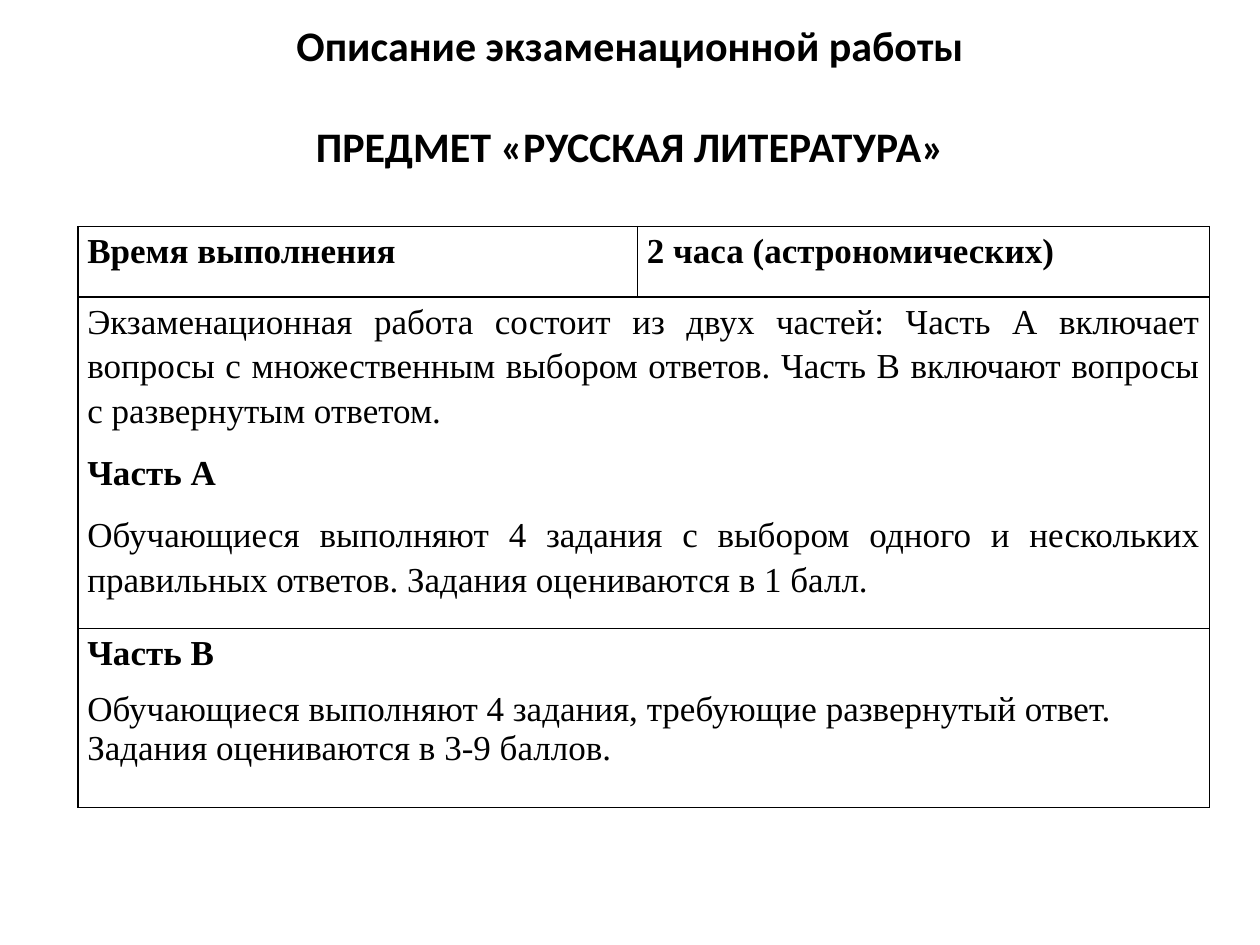
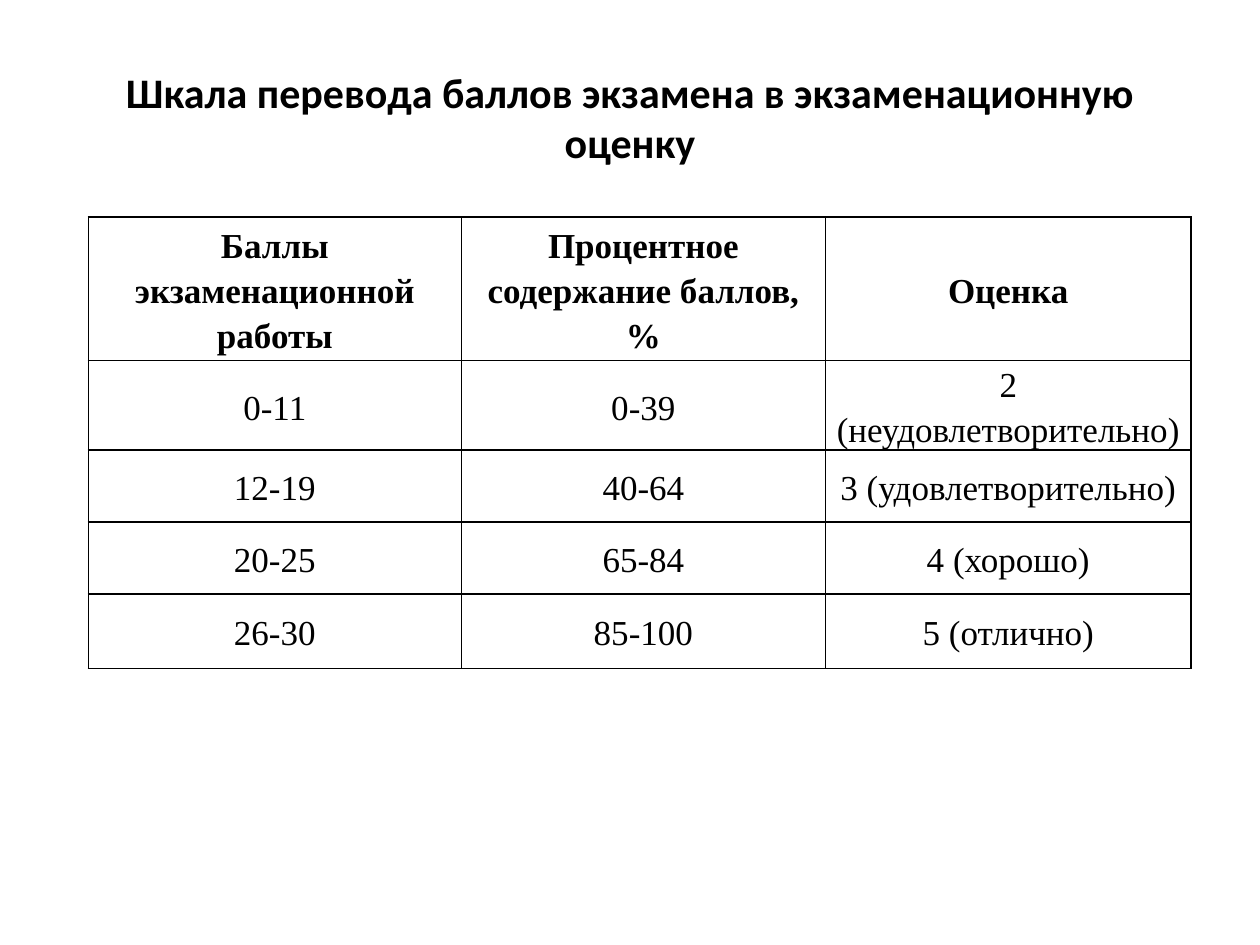
import dataclasses

import lxml.etree
import pptx
import pptx.dml.color
import pptx.enum.text
import pptx.oxml.ns
import pptx.util

Cm = pptx.util.Cm
Pt = pptx.util.Pt
ALIGN = pptx.enum.text.PP_ALIGN
ANCHOR = pptx.enum.text.MSO_ANCHOR
TITLE_ONLY = 5


@dataclasses.dataclass(frozen=True)
class Theme:
    ink: str = "000000"
    title_font: str = "Calibri"
    title_size: int = 24
    table_font: str = "Times New Roman"
    table_size: int = 20
    border: int = 1
    line_spacing: float = 1.15
    space_after: int = 10
    cell_inset: float = 0.19


THEME = Theme()


@dataclasses.dataclass(frozen=True)
class Line:
    """One paragraph of a table cell."""
    text: str
    bold: bool = False
    align: ALIGN = ALIGN.JUSTIFY
    spacing: float = THEME.line_spacing
    after: int = THEME.space_after


def add_span(para, text, font, size, bold):
    span = para.add_run()
    span.text = text
    span.font.name = font
    span.font.size = Pt(size)
    span.font.bold = bold
    span.font.color.rgb = pptx.dml.color.RGBColor.from_string(THEME.ink)


def paragraphs(frame, count):
    """Yield the frame's first paragraph, then new ones up to count."""
    yield frame.paragraphs[0]
    for _ in range(count - 1):
        yield frame.add_paragraph()


def add_titled_page(deck, title_lines, anchor=ANCHOR.MIDDLE, gap=0, bottom_inset=0.13):
    page = deck.slides.add_slide(deck.slide_layouts[TITLE_ONLY])
    box = page.shapes.title
    box.left, box.top, box.width, box.height = Cm(1.27), Cm(0.76), Cm(22.86), Cm(3.18)
    frame = box.text_frame
    frame.auto_size = pptx.enum.text.MSO_AUTO_SIZE.NONE
    frame.word_wrap = True
    frame.vertical_anchor = anchor
    frame.margin_bottom = Cm(bottom_inset)
    for index, para in enumerate(paragraphs(frame, len(title_lines))):
        para.alignment = ALIGN.CENTER
        para.space_before = Pt(gap if index else 0)
        add_span(para, title_lines[index], THEME.title_font, THEME.title_size, True)
    return page


def draw_borders(cell):
    properties = cell._tc.get_or_add_tcPr()
    qn = pptx.oxml.ns.qn
    for side in ("a:lnL", "a:lnR", "a:lnT", "a:lnB"):
        line = lxml.etree.SubElement(properties, qn(side), w=str(Pt(THEME.border)))
        fill = lxml.etree.SubElement(line, qn("a:solidFill"))
        lxml.etree.SubElement(fill, qn("a:srgbClr"), val=THEME.ink)


def add_grid(page, left, top, columns, rows, anchor):
    """Add an unfilled, ruled table; columns and rows are sizes in centimetres."""
    frame = page.shapes.add_table(len(rows), len(columns), Cm(left), Cm(top),
                                  Cm(sum(columns)), Cm(sum(rows)))
    table = frame.table
    table.first_row = table.horz_banding = False
    for column, width in zip(table.columns, columns):
        column.width = Cm(width)
    for row, height in zip(table.rows, rows):
        row.height = Cm(height)
        for cell in row.cells:
            cell.vertical_anchor = anchor
            cell.margin_left = cell.margin_right = Cm(THEME.cell_inset)
            cell.margin_top = cell.margin_bottom = 0
            draw_borders(cell)
            cell.fill.background()
    return table


def write_cell(cell, *lines):
    for para, line in zip(paragraphs(cell.text_frame, len(lines)), lines):
        para.alignment = line.align
        para.line_spacing = line.spacing
        para.space_after = Pt(line.after)
        add_span(para, line.text, THEME.table_font, THEME.table_size, line.bold)


def add_exam_description(deck):
    page = add_titled_page(
        deck, ["Описание экзаменационной работы", "ПРЕДМЕТ «РУССКАЯ ЛИТЕРАТУРА»"],
        anchor=ANCHOR.BOTTOM, gap=29, bottom_inset=0.5)
    table = add_grid(page, 1.57, 4.57, [11.28, 11.53], [1.42, 6.68, 3.61], ANCHOR.TOP)
    for row in (1, 2):
        table.cell(row, 0).merge(table.cell(row, 1))
    write_cell(table.cell(0, 0), Line("Время выполнения", bold=True, after=0))
    write_cell(table.cell(0, 1), Line("2 часа (астрономических)", bold=True, after=0))
    write_cell(
        table.cell(1, 0),
        Line("Экзаменационная работа состоит из двух частей: Часть А включает вопросы "
             "с множественным выбором ответов. Часть В включают вопросы с развернутым "
             "ответом."),
        Line("Часть А", bold=True),
        Line("Обучающиеся выполняют 4 задания с выбором одного и нескольких правильных "
             "ответов. Задания оцениваются в 1 балл."))
    write_cell(
        table.cell(2, 0),
        Line("Часть В", bold=True),
        Line("Обучающиеся выполняют 4 задания, требующие развернутый ответ. "
             "Задания оцениваются в 3-9 баллов.", align=ALIGN.LEFT, spacing=1.0, after=0))


def add_grade_scale(deck):
    page = add_titled_page(deck, ["Шкала перевода баллов экзамена в экзаменационную оценку"])
    scale = [
        ("Баллы экзаменационной работы", "Процентное содержание баллов, %", "Оценка"),
        ("0-11", "0-39", "2 (неудовлетворительно)"),
        ("12-19", "40-64", "3 (удовлетворительно)"),
        ("20-25", "65-84", "4 (хорошо)"),
        ("26-30", "85-100", "5 (отлично)"),
    ]
    table = add_grid(page, 1.78, 4.37, [7.52, 7.34, 7.37],
                     [2.9, 1.45, 1.45, 1.45, 1.5], ANCHOR.MIDDLE)
    for row, texts in enumerate(scale):
        for column, text in enumerate(texts):
            write_cell(table.cell(row, column),
                       Line(text, bold=row == 0, align=ALIGN.CENTER))


def main():
    deck = pptx.Presentation()
    deck.slide_width, deck.slide_height = Cm(25.4), Cm(19.05)
    add_exam_description(deck)
    add_grade_scale(deck)
    deck.save("out.pptx")


if __name__ == "__main__":
    main()
